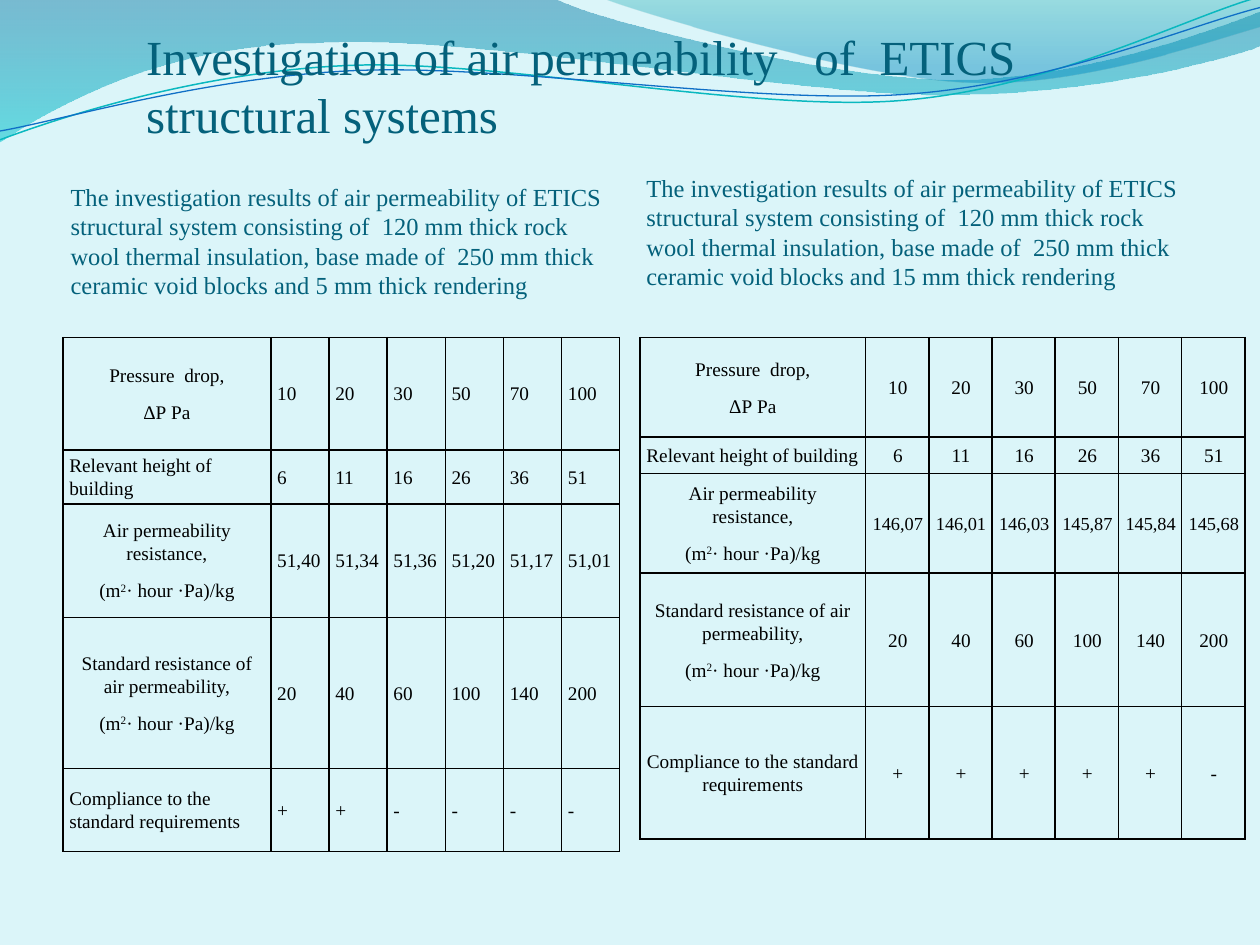
from pptx import Presentation
from pptx import util as u
from pptx.dml.color import RGBColor
from pptx.enum import text
from pptx.oxml import parse_xml
from pptx.oxml.ns import nsdecls

BACKGROUND = RGBColor(0xDB, 0xF5, 0xF9)
HEADING = RGBColor(0x04, 0x61, 0x7B)
BLACK = RGBColor(0, 0, 0)
DEEP_BLUE = RGBColor(0x00, 0x74, 0xA1)
CYAN = RGBColor(0x00, 0xC6, 0xCF)
TEAL = RGBColor(0x00, 0xA1, 0xA9)
SKY_BLUE = RGBColor(0x00, 0x8B, 0xBF)
LINE_TEAL = RGBColor(0x0A, 0xB8, 0xBF)
LINE_BLUE = RGBColor(0x0F, 0x6F, 0xC6)
FONT = "Times New Roman"
LEFT, CENTER = text.PP_ALIGN.LEFT, text.PP_ALIGN.CENTER

presentation = Presentation()
presentation.slide_width, presentation.slide_height = u.Inches(10), u.Inches(7.5)
slide = presentation.slides.add_slide(presentation.slide_layouts[6])
slide.background.fill.solid()
slide.background.fill.fore_color.rgb = BACKGROUND


def add_wave(start, segments, closed):
    """Draw straight (x, y) and cubic (x1, y1, x2, y2, x, y) segments,
    measured in hundredths of an inch."""
    anchors = [start] + [segment[-2:] for segment in segments]
    left, top = (min(values) for values in zip(*anchors))
    builder = slide.shapes.build_freeform(*start, scale=u.Inches(0.01))
    builder.add_line_segments(anchors[1:], close=closed)
    shape = builder.convert_to_shape()
    shape.shadow.inherit = False
    # Bend the straight pieces that have control points
    for piece, segment in zip(shape._element.xpath(".//a:lnTo"), segments):
        if len(segment) == 6:
            points = "".join(f'<a:pt x="{x - left}" y="{y - top}"/>'
                             for x, y in zip(segment[::2], segment[1::2]))
            piece.getparent().replace(piece, parse_xml(
                f'<a:cubicBezTo {nsdecls("a")}>{points}</a:cubicBezTo>'))
    return shape


def add_text(paragraph, content, size, color):
    """Add runs; parts between ^ marks are superscript."""
    for index, part in enumerate(content.split("^")):
        run = paragraph.add_run()
        run.text = part
        run.font.name, run.font.size = FONT, u.Pt(size)
        run.font.color.rgb = color
        if index % 2:
            run._r.get_or_add_rPr().set("baseline", "30000")


# Filled waves: start, segments, gradient stops (position, colour, opacity %)
filled_waves = [
    ((0, -1),
     [(440, -1), (476, 17, 664, 63, 758, 63), (853, 63, 958, 26, 1000, 9), (1001, 36),
      (983, 44, 870, 76, 746, 75), (622, 75, 382, 28, 257, 34),
      (129, 35, 46, 83, -1, 113)],
     [(0, DEEP_BLUE, 45), (1, CYAN, 55)]),
    ((479, -1),
     [(509, 11, 682, 62, 769, 65), (856, 69, 961, 32, 1000, 21), (1000, 0)],
     [(0, TEAL, 30), (0.8, SKY_BLUE, 45)]),
]
for start, segments, stops in filled_waves:
    shape = add_wave(start, segments, True)
    shape.line.fill.background()
    shape.fill.gradient()
    shape.fill.gradient_angle = 270
    for stop, (position, color, opacity) in zip(shape.fill.gradient_stops, stops):
        stop.position = position
        stop.color.rgb = color
        stop._gs[0].append(parse_xml(f'<a:alpha {nsdecls("a")} val="{opacity * 1000}"/>'))

# Thin wave lines
wave_lines = [
    ((0, 111), [(48, 93, 158, 57, 277, 52), (395, 47, 593, 89, 713, 80),
                (833, 71, 938, 15, 998, -2)], LINE_TEAL, 0.85),
    ((0, 104), [(47, 96, 164, 61, 283, 56), (403, 51, 597, 83, 717, 75),
                (836, 67, 941, 21, 1000, 6)], LINE_BLUE, 0.75),
]
for start, segments, color, width in wave_lines:
    shape = add_wave(start, segments, False)
    shape.fill.background()
    shape.line.color.rgb = color
    shape.line.width = u.Pt(width)

# Title and the two table captions
caption = ("The investigation results of air permeability of ETICS structural system "
           "consisting of  120 mm thick rock wool thermal insulation, base made of  250 mm "
           "thick ceramic void blocks and {} mm thick rendering")
text_boxes = [
    ((0.58, -0.11, 9, 1.25), (0.58, 0.05, 0, 0), text.MSO_ANCHOR.BOTTOM, 28,
     ["Investigation of air permeability   of  ETICS", "structural systems"]),
    ((0.51, 1.31, 4.42, 1.2), (0.05, 0, 0.05, 0), text.MSO_ANCHOR.MIDDLE, 14,
     [caption.format(5)]),
    ((5.08, 1.48, 4.42, 0.72), (0.05, 0, 0.05, 0), text.MSO_ANCHOR.MIDDLE, 14,
     [caption.format(15)]),
]
for box, insets, anchor, size, lines in text_boxes:
    frame = slide.shapes.add_textbox(*map(u.Inches, box)).text_frame
    frame.word_wrap = True
    frame.vertical_anchor = anchor
    (frame.margin_left, frame.margin_top,
     frame.margin_right, frame.margin_bottom) = map(u.Inches, insets)
    paragraph = frame.paragraphs[0]
    for index, line in enumerate(lines):
        if index:
            paragraph.add_line_break()
        add_text(paragraph, line, size, HEADING)

# Result tables
UNIT = "(m^2^· hour ·Pа)/kg"
labels = [
    ["Pressure  drop,", "ΔР Pa"],
    ["Relevant height of building"],
    ["Air permeability resistance,", UNIT],
    ["Standard resistance of air permeability,", UNIT],
    ["Compliance to the standard requirements"],
]
pressures = ["10", "20", "30", "50", "70", "100"]
heights = ["6", "11", "16", "26", "36", "51"]
standards = ["20", "40", "60", "100", "140", "200"]
# left, width, label width, row heights, label alignments, value alignment,
# resistance size, resistances, compliance
tables = [
    (0.5, 4.42, 1.65, [0.89, 0.43, 0.9, 1.2, 0.66],
     [CENTER, LEFT, CENTER, CENTER, LEFT], LEFT, 11,
     ["51,40", "51,34", "51,36", "51,20", "51,17", "51,01"], "++----"),
    (5.08, 4.8, 1.79, [0.79, 0.29, 0.79, 1.06, 1.05],
     [CENTER, LEFT, CENTER, CENTER, CENTER], CENTER, 10.5,
     ["146,07", "146,01", "146,03", "145,87", "145,84", "145,68"], "+++++-"),
]
for (left, width, label_width, row_heights, label_alignments, value_alignment,
     resistance_size, resistances, compliance) in tables:
    values = [pressures, heights, resistances, standards, compliance]
    table = slide.shapes.add_table(
        len(labels), len(pressures) + 1, u.Inches(left), u.Inches(2.68),
        u.Inches(width), u.Inches(sum(row_heights))).table
    table.first_row = table.horz_banding = False
    for index, column in enumerate(table.columns):
        column.width = u.Inches((width - label_width) / len(pressures) if index else label_width)
    for row, row_height in enumerate(row_heights):
        table.rows[row].height = u.Inches(row_height)
        contents = [labels[row]] + [[value] for value in values[row]]
        for column, lines in enumerate(contents):
            cell = table.cell(row, column)
            cell.vertical_anchor = text.MSO_ANCHOR.MIDDLE
            cell.margin_left = u.Inches(0.05)
            cell.margin_right = u.Inches(0.04 if column else 0.05)
            cell.margin_top = cell.margin_bottom = 0
            for side in ("lnL", "lnR", "lnT", "lnB"):
                cell._tc.get_or_add_tcPr().append(parse_xml(
                    f'<a:{side} {nsdecls("a")} w="12700"><a:solidFill>'
                    f'<a:srgbClr val="{BLACK}"/></a:solidFill></a:{side}>'))
            cell.fill.background()
            size = resistance_size if row == 2 and column else 11
            for index, line in enumerate(lines):
                frame = cell.text_frame
                paragraph = frame.add_paragraph() if index else frame.paragraphs[0]
                paragraph.alignment = value_alignment if column else label_alignments[row]
                paragraph.line_spacing = 1.07
                paragraph.space_after = u.Pt(8)
                add_text(paragraph, line, size, BLACK)

presentation.save("out.pptx")
